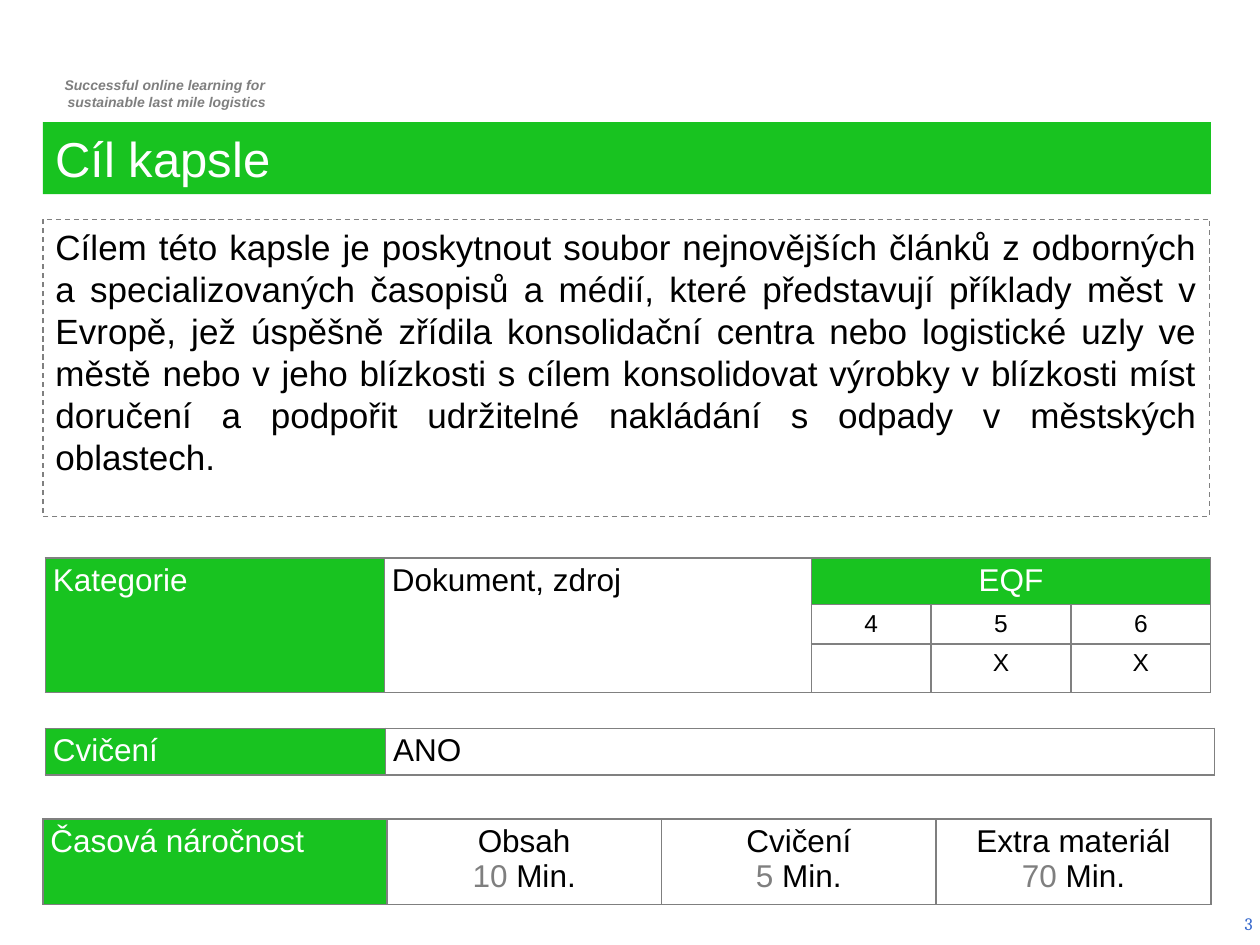
"""Build the capsule goal slide with its category, exercise and time tables."""
import pptx
import pptx.dml.color
import pptx.enum.dml
import pptx.enum.text
import pptx.oxml
import pptx.oxml.ns
import pptx.util

Inches = pptx.util.Inches
Pt = pptx.util.Pt
ALIGN = pptx.enum.text.PP_ALIGN
ANCHOR = pptx.enum.text.MSO_ANCHOR
COLORS = {"green": "18C320", "grey": "808080", "mid": "7F7F7F",
          "white": "FFFFFF", "black": "000000", "blue": "3366CC"}
GOAL = ("Cílem této kapsle je poskytnout soubor nejnovějších článků z odborných "
        "a specializovaných časopisů a médií, které představují příklady měst v "
        "Evropě, jež úspěšně zřídila konsolidační centra nebo logistické uzly ve "
        "městě nebo v jeho blízkosti s cílem konsolidovat výrobky v blízkosti míst "
        "doručení a podpořit udržitelné nakládání s odpady v městských oblastech.")


def rgb(name):
    return pptx.dml.color.RGBColor.from_string(COLORS[name])


def set_all(obj, values):
    for key, value in values.items():
        setattr(obj, key, value)


def place(sp, box):
    set_all(sp, dict(zip(("left", "top", "width", "height"), map(Inches, box))))


def write(tf, lines, align, size, font="Arial", **style):
    """Fill a frame with lines, each a list of (text, colour) runs."""
    for i, line in enumerate(lines):
        p = tf.paragraphs[0] if i == 0 else tf.add_paragraph()
        set_all(p, {"alignment": align, "space_before": Pt(0), "line_spacing": 1.0})
        for text, color in line:
            r = p.add_run()
            r.text = text
            set_all(r.font, {"name": font, "size": Pt(size), **style})
            r.font.color.rgb = rgb(color)


def set_indent(p, margin, no_bullet=False):
    pPr = p._p.get_or_add_pPr()
    pPr.set("marL", str(Inches(margin)))
    pPr.set("indent", "0")
    if no_bullet:
        pPr.append(pptx.oxml.parse_xml(
            f"<a:buNone {pptx.oxml.ns.nsdecls('a')}/>"))


def format_frame(tf, anchor):
    set_all(tf, {"word_wrap": True, "vertical_anchor": anchor,
                 "auto_size": pptx.enum.text.MSO_AUTO_SIZE.NONE,
                 "margin_left": Inches(0.1), "margin_right": Inches(0.1),
                 "margin_top": Inches(0.05), "margin_bottom": Inches(0.05)})


def add_text(s, box, lines, align, size, anchor=ANCHOR.TOP, **style):
    sp = s.shapes.add_textbox(*map(Inches, box))
    format_frame(sp.text_frame, anchor)
    write(sp.text_frame, lines, align, size, **style)
    return sp


def fill_title(s):
    sp = s.shapes.title
    place(sp, (0.34, 0.97, 9.27, 0.57))
    sp.fill.solid()
    sp.fill.fore_color.rgb = rgb("green")
    format_frame(sp.text_frame, ANCHOR.MIDDLE)
    write(sp.text_frame, [[("Cíl kapsle", "white")]], ALIGN.LEFT, 28)


def fill_body(s):
    sp = s.placeholders[1]
    place(sp, (0.34, 1.74, 9.26, 2.36))
    sp.line.color.rgb = rgb("grey")
    set_all(sp.line, {"width": Pt(0.75),
                      "dash_style": pptx.enum.dml.MSO_LINE.DASH})
    tf = sp.text_frame
    format_frame(tf, ANCHOR.TOP)
    write(tf, [[(GOAL, "black")]], ALIGN.JUSTIFY, 20)
    set_indent(tf.paragraphs[0], 0, no_bullet=True)


def add_borders(cell, color, width):
    tcPr = cell._tc.get_or_add_tcPr()
    for i, side in enumerate(("lnL", "lnR", "lnT", "lnB")):
        tcPr.insert(i, pptx.oxml.parse_xml(
            f'<a:{side} {pptx.oxml.ns.nsdecls("a")} w="{Pt(width)}"><a:solidFill>'
            f'<a:srgbClr val="{COLORS[color]}"/></a:solidFill></a:{side}>'))


def add_table(s, left, top, cols, rows, border=("grey", 1)):
    """Add a plain bordered table from column widths and row heights."""
    frame = s.shapes.add_table(len(rows), len(cols), *map(
        Inches, (left, top, sum(cols), sum(rows))))
    tbl = frame.table
    set_all(tbl, {"first_row": False, "horz_banding": False})
    for col, width in zip(tbl.columns, cols):
        col.width = Inches(width)
    for row, height in zip(tbl.rows, rows):
        row.height = Inches(height)
    for cell in tbl.iter_cells():
        set_all(cell, {"margin_left": Inches(0.06), "margin_right": Inches(0.06),
                       "margin_top": Inches(0.04), "margin_bottom": Inches(0.04)})
        cell.fill.background()
        add_borders(cell, *border)
    return tbl


def fill_cell(cell, lines, align=ALIGN.CENTER, size=18):
    write(cell.text_frame, lines, align, size)


def fill_label(cell, text, align=ALIGN.JUSTIFY):
    cell.fill.solid()
    cell.fill.fore_color.rgb = rgb("green")
    fill_cell(cell, [[(text, "white")]], align)


def add_category(s):
    tbl = add_table(s, 0.36, 4.43, (2.69, 3.39, 0.95, 1.11, 1.11), (0.37, 0.31, 0.37))
    for col in (0, 1):
        tbl.cell(0, col).merge(tbl.cell(2, col))
    tbl.cell(0, 2).merge(tbl.cell(0, 4))
    fill_label(tbl.cell(0, 0), "Kategorie ")
    fill_cell(tbl.cell(0, 1), [[("Dokument, zdroj", "black")]], ALIGN.JUSTIFY)
    fill_label(tbl.cell(0, 2), "EQF", ALIGN.CENTER)
    for col, (level, mark) in enumerate((("4", ""), ("5", "X"), ("6", "X")), 2):
        fill_cell(tbl.cell(1, col), [[(level, "black")]], size=14)
        if mark:
            fill_cell(tbl.cell(2, col), [[(mark, "black")]], size=14)


def add_exercise(s):
    tbl = add_table(s, 0.36, 5.78, (2.7, 6.58), (0.37,))
    fill_label(tbl.cell(0, 0), "Cvičení")
    fill_cell(tbl.cell(0, 1), [[("ANO", "black")]], ALIGN.JUSTIFY)


def add_times(s):
    tbl = add_table(s, 0.34, 6.5, (2.73, 2.18, 2.18, 2.18), (0.68,), ("mid", 0.91))
    fill_label(tbl.cell(0, 0), "Časová náročnost")
    times = (("Obsah", "10"), ("Cvičení", "5"), ("Extra materiál", "70"))
    for col, (name, minutes) in enumerate(times, 1):
        fill_cell(tbl.cell(0, col), [[(name, "black")],
                                     [(minutes + " ", "mid"), ("Min.", "black")]])


def main():
    prs = pptx.Presentation()
    set_all(prs, {"slide_width": Inches(10), "slide_height": Inches(7.5)})
    s = prs.slides.add_slide(prs.slide_layouts[1])
    motto = add_text(s, (0.29, 0.56, 2.03, 0.37),
                     [[("Successful online learning for ", "mid")],
                      [("sustainable last mile logistics", "mid")]],
                     ALIGN.CENTER, 8, bold=True, italic=True)
    for p in motto.text_frame.paragraphs:
        set_indent(p, 0.04)
    add_text(s, (7.71, 7.13, 2.33, 0.4), [[("3", "blue")]], ALIGN.RIGHT, 10,
             ANCHOR.MIDDLE, font="Cambria")
    fill_title(s)
    fill_body(s)
    add_category(s)
    add_exercise(s)
    add_times(s)
    prs.save("out.pptx")


if __name__ == "__main__":
    main()
